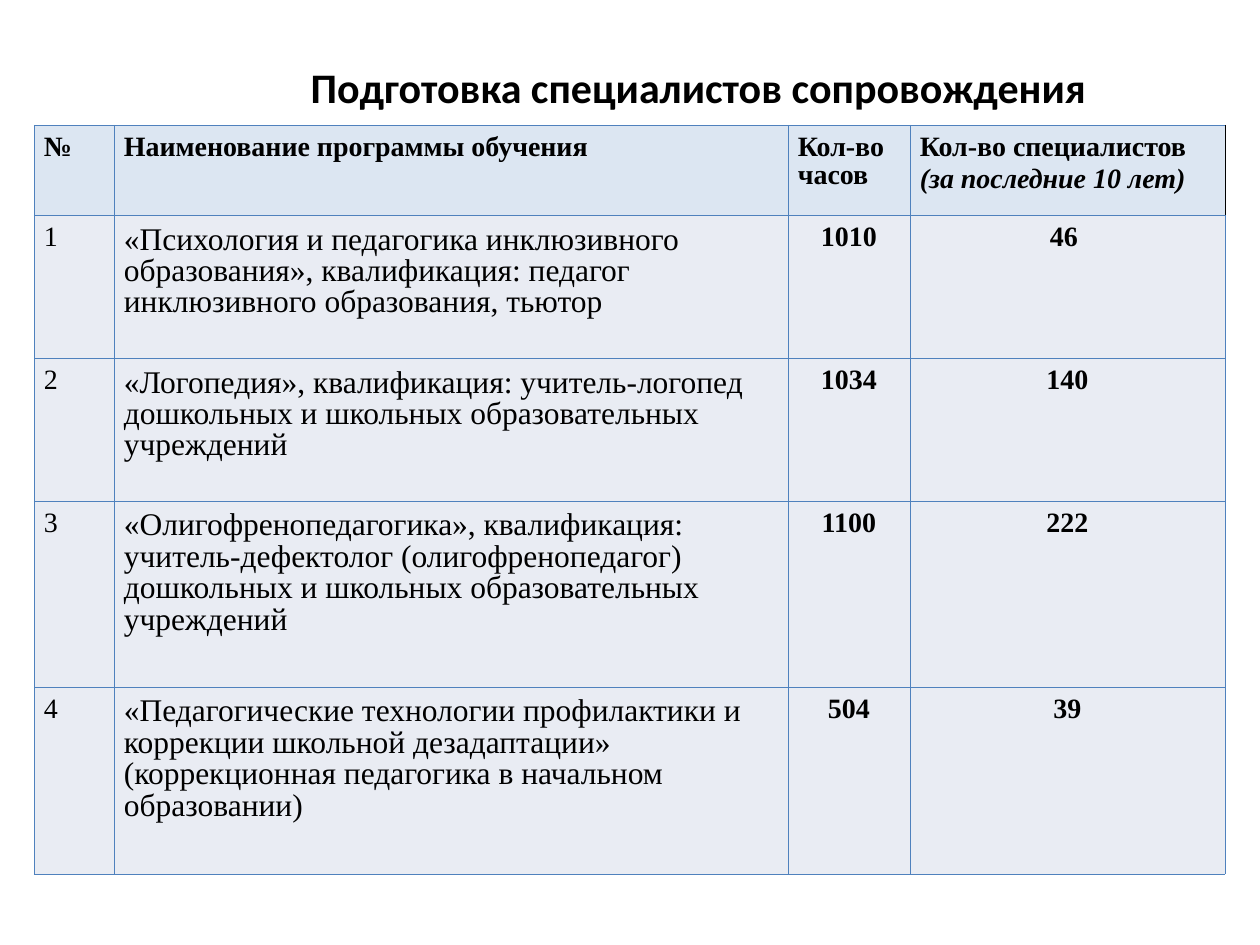
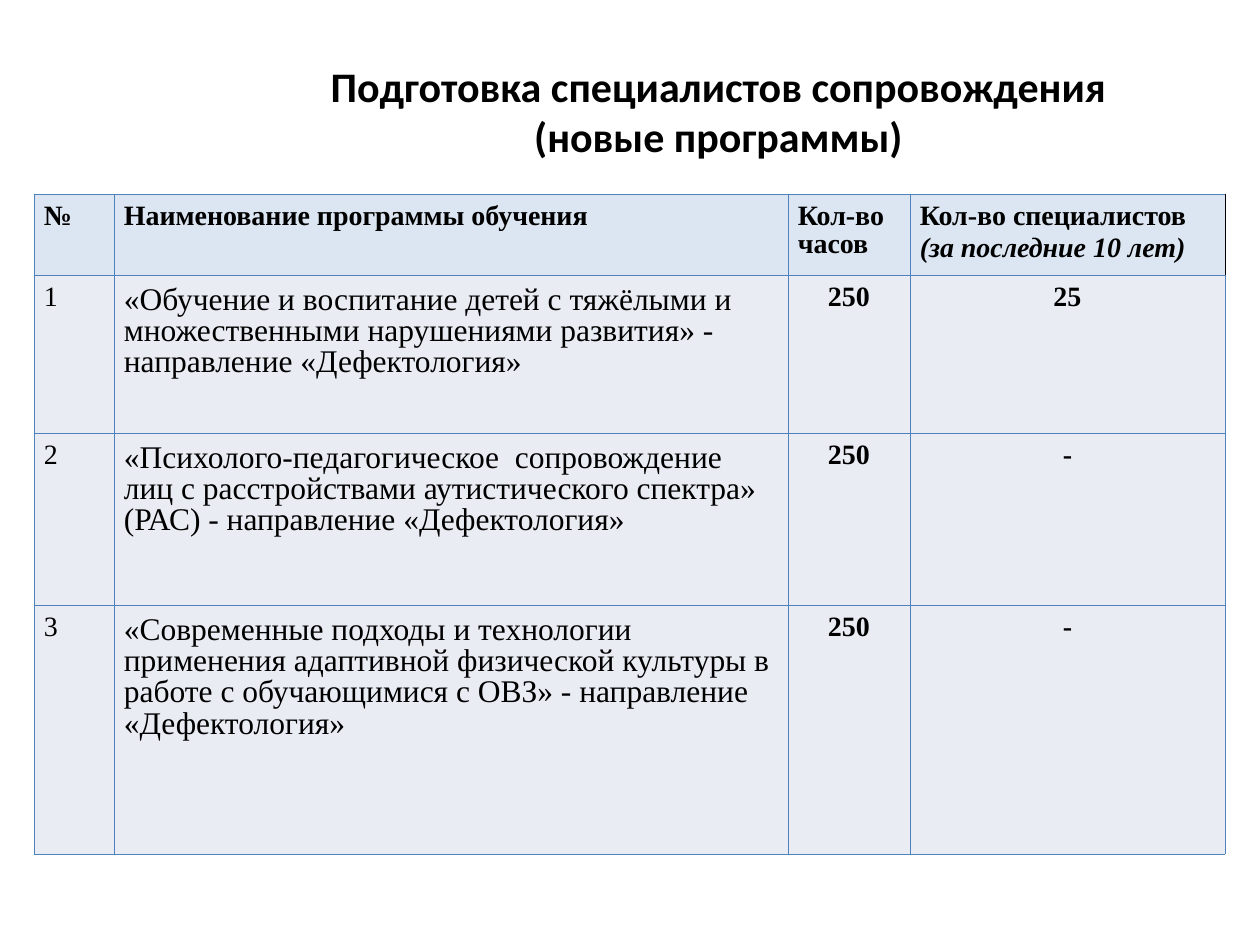
from lxml import etree
from pptx import Presentation
from pptx import util as u
from pptx.dml.color import RGBColor
from pptx.enum import text
from pptx.oxml.ns import qn

EMU_PER_PX = 914400 / 126
COLORS = {"text": "000000", "header": "DCE6F2", "body": "E9ECF3",
          "line": "4F81BD", "edge": "000000"}
TITLE_FONT, TABLE_FONT = "Calibri", "Times New Roman"
COLUMNS = [80, 674, 122, 315]
TABLE_LEFT = 34
HEADER = ["№", "Наименование программы обучения", "Кол-во часов",
          "Кол-во специалистов"]
HEADER_NOTE = "(за последние 10 лет)"
CENTER = text.PP_ALIGN.CENTER

SLIDES = [
    {
        "title": "Подготовка специалистов сопровождения",
        "title_box": (272, 55, 853, 50),
        "table_top": 125,
        "heights": [90, 143, 143, 186, 187],
        "programs": [
            ("«Психология и педагогика инклюзивного образования», квалификация: "
             "педагог инклюзивного образования, тьютор", "1010", "46 "),
            ("«Логопедия», квалификация: учитель-логопед дошкольных и школьных "
             "образовательных учреждений", "1034", "140"),
            ("«Олигофренопедагогика», квалификация: учитель-дефектолог "
             "(олигофренопедагог) дошкольных и школьных образовательных "
             "учреждений", "1100", "222"),
            ("«Педагогические технологии профилактики и коррекции школьной "
             "дезадаптации» (коррекционная педагогика в начальном образовании)",
             "504", "39"),
        ],
    },
    {
        "title": "Подготовка специалистов сопровождения (новые программы)",
        "title_box": (292, 54, 853, 101),
        "table_top": 194,
        "heights": [81, 158, 172, 249],
        "programs": [
            ("«Обучение и воспитание детей с тяжёлыми и множественными "
             "нарушениями развития» - направление «Дефектология»", "250", "25"),
            ("«Психолого-педагогическое  сопровождение лиц с расстройствами "
             "аутистического спектра» (РАС) - направление «Дефектология»",
             "250", "-"),
            ("«Современные подходы и технологии применения адаптивной физической "
             "культуры в работе с обучающимися с ОВЗ» - направление "
             "«Дефектология»", "250", "-"),
        ],
    },
]


def px(n):
    """Turn pixels into EMU."""
    return u.Emu(round(n * EMU_PER_PX))


def write(p, content, font=TABLE_FONT, size=16, bold=False, italic=False,
          align=text.PP_ALIGN.LEFT, spacing=0.9):
    """Put one formatted run into a paragraph."""
    p.alignment, p.line_spacing = align, spacing
    r = p.add_run()
    r.text = content
    f = r.font
    f.name, f.size, f.bold, f.italic = font, u.Pt(size), bold, italic
    f.color.rgb = RGBColor.from_string(COLORS["text"])


def set_borders(cell, right):
    """Draw thin lines on the four sides of a cell."""
    tcPr = cell._tc.get_or_add_tcPr()
    for side in "LRTB":
        ln = etree.SubElement(tcPr, qn(f"a:ln{side}"), w=str(u.Pt(0.23)))
        fill = etree.SubElement(ln, qn("a:solidFill"))
        color = COLORS[right if side == "R" else "line"]
        etree.SubElement(fill, qn("a:srgbClr"), val=color)


def style_cell(cell, fill, top=9, right="line"):
    """Set the margins, borders and fill of a cell."""
    cell.margin_left = cell.margin_right = px(10)
    cell.margin_top, cell.margin_bottom = px(top), px(6)
    set_borders(cell, right)
    cell.fill.solid()
    cell.fill.fore_color.rgb = RGBColor.from_string(COLORS[fill])


def add_title(s, content, box):
    """Place the slide title in its box."""
    sp = s.shapes.title
    sp.left, sp.top, sp.width, sp.height = map(px, box)
    tf = sp.text_frame
    tf.word_wrap, tf.auto_size = True, text.MSO_AUTO_SIZE.NONE
    tf.vertical_anchor = text.MSO_ANCHOR.TOP
    write(tf.paragraphs[0], content, font=TITLE_FONT, size=24, bold=True,
          align=CENTER, spacing=1.0)


def fill_header(table):
    """Write the header row."""
    last = len(HEADER) - 1
    for i, label in enumerate(HEADER):
        cell = table.cell(0, i)
        style_cell(cell, "header", right="edge" if i == last else "line")
        write(cell.text_frame.paragraphs[0], label, bold=True)
    write(table.cell(0, last).text_frame.add_paragraph(), HEADER_NOTE,
          bold=True, italic=True, spacing=1.04)


def fill_program(table, row, program):
    """Write the number, name, hours and specialists of one program."""
    formats = [{}, {"size": 18}] + [{"bold": True, "align": CENTER}] * 2
    for i, (content, fmt) in enumerate(zip((str(row), *program), formats)):
        cell = table.cell(row, i)
        style_cell(cell, "body", top=10 if i == 1 else 9)
        write(cell.text_frame.paragraphs[0], content, **fmt)


def add_programs(s, left, top, heights, programs):
    """Place the table of training programs."""
    frame = s.shapes.add_table(len(heights), len(COLUMNS), px(left), px(top),
                               px(sum(COLUMNS)), px(sum(heights)))
    table = frame.table
    table.first_row = table.horz_banding = False
    for column, width in zip(table.columns, COLUMNS):
        column.width = px(width)
    for row, height in zip(table.rows, heights):
        row.height = px(height)
    fill_header(table)
    for row, program in enumerate(programs, 1):
        fill_program(table, row, program)


def main():
    """Build the slides and save them."""
    prs = Presentation()
    prs.slide_width, prs.slide_height = px(1260), px(945)
    for data in SLIDES:
        s = prs.slides.add_slide(prs.slide_layouts[5])
        add_title(s, data["title"], data["title_box"])
        add_programs(s, TABLE_LEFT, data["table_top"], data["heights"],
                     data["programs"])
    prs.save("out.pptx")


if __name__ == "__main__":
    main()
